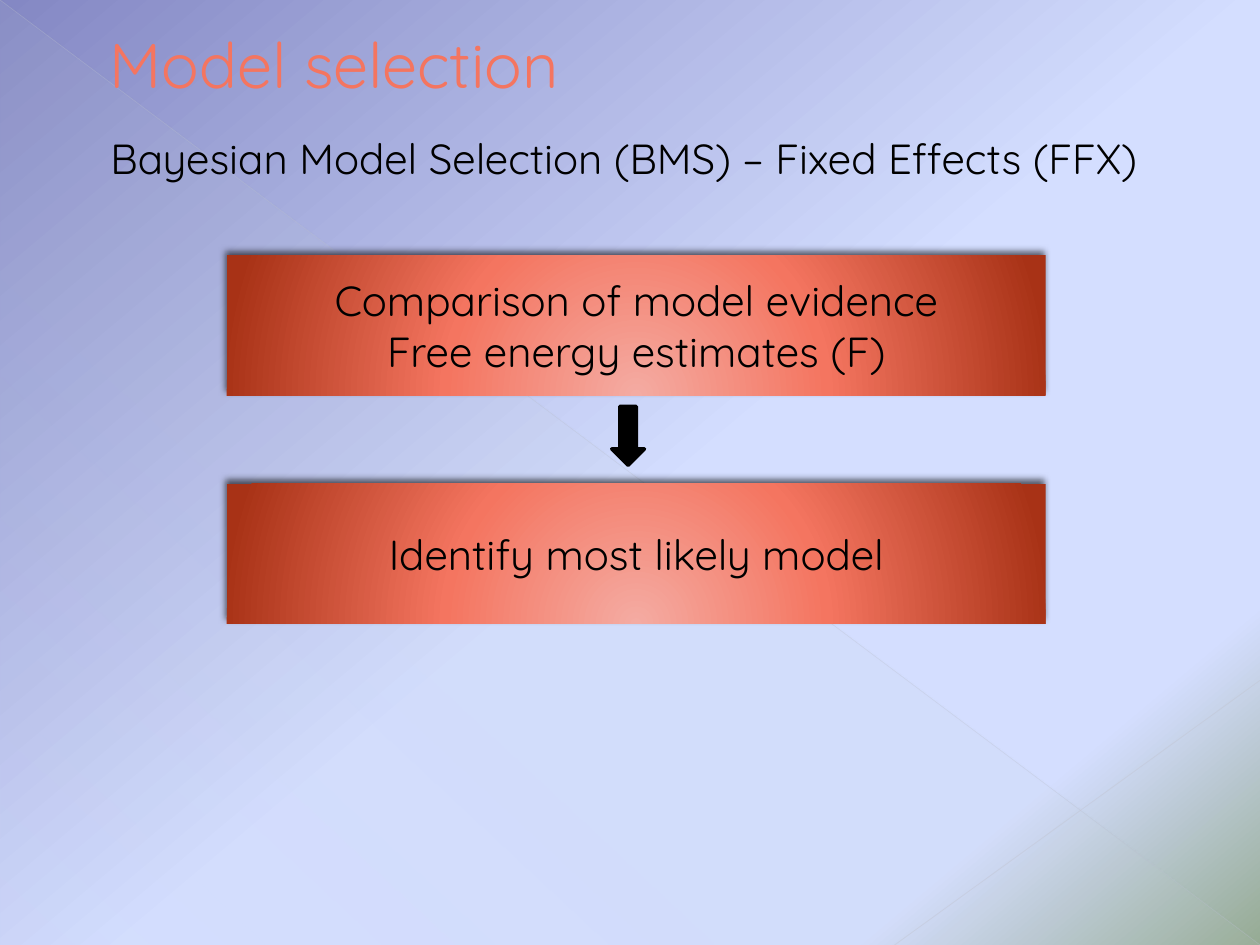
from dataclasses import dataclass

import lxml.etree
import pptx
import pptx.dml.color
import pptx.enum.shapes
import pptx.enum.text
import pptx.oxml.ns
import pptx.util

SHAPES = pptx.enum.shapes.MSO_SHAPE
ALIGN = pptx.enum.text.PP_ALIGN


@dataclass(frozen=True)
class Theme:
    font: str = "Quicksand"
    title_size: int = 36
    body_size: int = 24
    title: str = "F47560"
    ink: str = "000000"
    backdrop: tuple = ((0, "8488C4", 100), (53, "D4DEFF", 100),
                       (83, "D4DEFF", 100), (100, "96AB94", 100))
    veil: tuple = ((0, "C5D1D7", 10), (70, "C5D1D7", 8), (100, "C5D1D7", 1))
    step: tuple = ((0, "F4ABA2", 100), (46, "F47560", 100), (100, "A83216", 100))
    falling: str = "BABECD"
    rising: str = "C2C5D2"


@dataclass(frozen=True)
class Box:
    left: float
    top: float
    width: float
    height: float

    def inner(self, x, y, w, h):
        return Box(self.left + x * self.width, self.top + y * self.height,
                   w * self.width, h * self.height)

    def emu(self):
        return [pptx.util.Inches(v) for v in (self.left, self.top, self.width, self.height)]


THEME = Theme()
PAGE = Box(0, 0, 10, 7.5)


def rgb(value):
    return pptx.dml.color.RGBColor.from_string(value)


def add(parent, tag, **attributes):
    node = lxml.etree.SubElement(parent, pptx.oxml.ns.qn(tag))
    for key, value in attributes.items():
        node.set(key, str(value))
    return node


def add_color(parent, value, opacity):
    color = add(parent, "a:srgbClr", val=value)
    if opacity < 100:
        add(color, "a:alpha", val=opacity * 1000)


def paint_gradient(fill, owner, stops, angle=None, focus=None):
    fill.gradient()
    gradient = owner.xpath(".//a:gradFill")[0]
    for child in list(gradient):
        gradient.remove(child)
    stop_list = add(gradient, "a:gsLst")
    for position, value, opacity in stops:
        add_color(add(stop_list, "a:gs", pos=position * 1000), value, opacity)
    if focus:
        circle = add(gradient, "a:path", path="circle")
        add(circle, "a:fillToRect", **{side: share * 1000 for side, share in zip("ltrb", focus)})
    else:
        add(gradient, "a:lin", ang=angle * 60000, scaled=0)


def write(frame, text, size=THEME.body_size, color=THEME.ink, align=ALIGN.CENTER):
    frame.word_wrap = True
    frame.vertical_anchor = pptx.enum.text.MSO_ANCHOR.MIDDLE
    for number, line in enumerate(text.split("\n")):
        paragraph = frame.add_paragraph() if number else frame.paragraphs[0]
        paragraph.alignment = align
        run = paragraph.add_run()
        run.text = line
        run.font.name = THEME.font
        run.font.size = pptx.util.Pt(size)
        run.font.color.rgb = rgb(color)


def place_shape(slide, kind, box):
    shape = slide.shapes.add_shape(kind, *box.emu())
    shape.shadow.inherit = False
    shape.line.fill.background()
    return shape


def draw_ray(slide, box, start, end, color, width, opacity):
    ends = [pptx.util.Inches(v) for x, y in (start, end)
            for v in (box.left + x * box.width, box.top + y * box.height)]
    ray = slide.shapes.add_connector(pptx.enum.shapes.MSO_CONNECTOR.STRAIGHT, *ends)
    ray.line.color.rgb = rgb(color)
    ray.line.width = pptx.util.Pt(width)
    add(ray.element.xpath(".//a:ln//a:srgbClr")[0], "a:alpha", val=opacity * 1000)
    add(ray.element.spPr, "a:effectLst")


def draw_backdrop(slide, box):
    paint_gradient(slide.background.fill, slide.element, THEME.backdrop, angle=50)
    veil = place_shape(slide, SHAPES.RIGHT_TRIANGLE, box)
    paint_gradient(veil.fill, veil.element, THEME.veil, angle=133)
    draw_ray(slide, box, (0, 0), (1, 1), THEME.falling, 0.39, 35)
    draw_ray(slide, box, (1, 0.72), (0.71, 1), THEME.rising, 0.47, 45)


def draw_heading(slide, box):
    title = slide.shapes.add_textbox(*box.inner(0.02, 0, 0.98, 0.64).emu())
    write(title.text_frame, "Model selection", size=THEME.title_size,
          color=THEME.title, align=ALIGN.LEFT)
    subtitle = slide.shapes.add_textbox(*box.inner(0, 0.59, 1, 0.41).emu())
    write(subtitle.text_frame, "Bayesian Model Selection (BMS) – Fixed Effects (FFX)")


def draw_step(slide, box, text):
    step = place_shape(slide, SHAPES.RECTANGLE, box)
    paint_gradient(step.fill, step.element, THEME.step, focus=(50, 155, 50, -55))
    effects = step.element.spPr.find(pptx.oxml.ns.qn("a:effectLst"))
    shadow = add(effects, "a:outerShdw", blurRad=pptx.util.Pt(4), dist=pptx.util.Pt(3),
                 dir=245 * 60000, rotWithShape=0)
    add_color(shadow, THEME.ink, 60)
    write(step.text_frame, text)


def draw_flow(slide, box):
    steps = ("Comparison of model evidence\nFree energy estimates (F)",
             "Identify most likely model")
    share = 0.38
    for number, text in enumerate(steps):
        draw_step(slide, box.inner(0, number * (1 - share), 1, share), text)
    arrow = place_shape(slide, SHAPES.DOWN_ARROW, box.inner(0.47, 0.41, 0.04, 0.16))
    arrow.fill.solid()
    arrow.fill.fore_color.rgb = rgb(THEME.ink)
    arrow.line.color.rgb = rgb(THEME.ink)
    arrow.line.width = pptx.util.Pt(2)


def main():
    deck = pptx.Presentation()
    deck.slide_width = pptx.util.Inches(PAGE.width)
    deck.slide_height = pptx.util.Inches(PAGE.height)
    slide = deck.slides.add_slide(deck.slide_layouts[6])
    draw_backdrop(slide, PAGE)
    draw_heading(slide, PAGE.inner(0.06, 0, 0.87, 0.21))
    draw_flow(slide, PAGE.inner(0.18, 0.27, 0.65, 0.39))
    deck.save("out.pptx")


if __name__ == "__main__":
    main()
